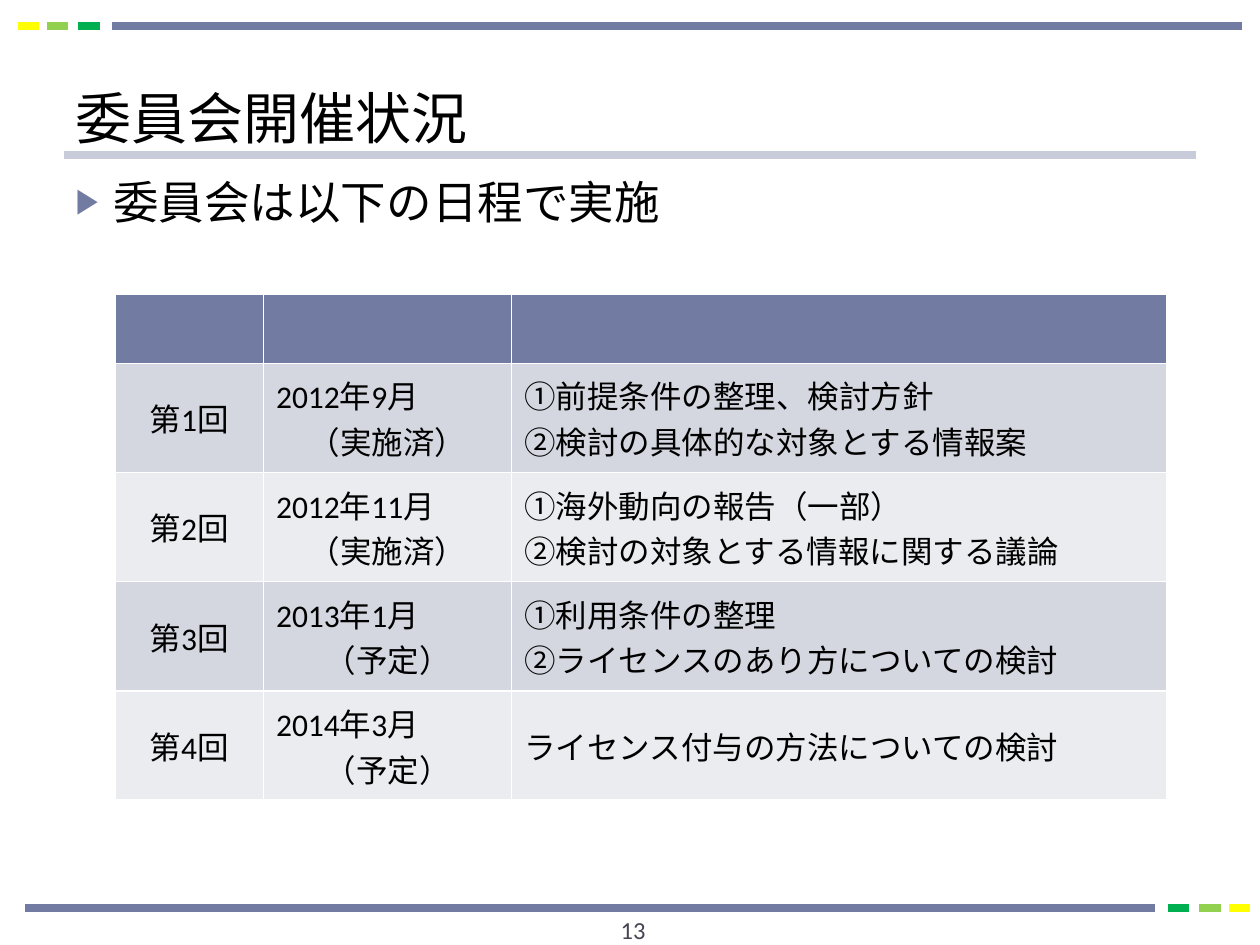
from lxml.etree import SubElement
from pptx import Presentation
from pptx.dml.color import RGBColor
from pptx.enum.shapes import MSO_CONNECTOR
from pptx.enum.text import MSO_ANCHOR, MSO_AUTO_SIZE, PP_ALIGN
from pptx.oxml.ns import qn
from pptx.util import Pt

SLATE = RGBColor(0x72, 0x7C, 0xA3)
PALE_SLATE = RGBColor(0xC7, 0xCB, 0xDA)
GREEN = RGBColor(0x00, 0xB0, 0x50)
LIME = RGBColor(0x92, 0xD0, 0x50)
YELLOW = RGBColor(0xFF, 0xFF, 0x00)
BAND_DARK = RGBColor(0xD5, 0xD7, 0xE0)
BAND_LIGHT = RGBColor(0xEB, 0xEC, 0xF0)
BLACK = RGBColor(0x00, 0x00, 0x00)
GRAY = RGBColor(0x46, 0x46, 0x53)

BODY_FONT = "Calibri"
TITLE_FONT = "TeX Gyre Bonum"

RULE_PARTS = [
    (0, 645.8, SLATE),
    (653, 12.24, GREEN),
    (671, 12.24, LIME),
    (687.6, 12.24, YELLOW),
]
COL_WIDTHS = [85, 141.8, 374.4]
HEADER_HEIGHT, ROW_HEIGHT = 39.6, 62.4
MEETINGS = [
    ("第1回", "2012年9月\n（実施済）", "①前提条件の整理、検討方針\n②検討の具体的な対象とする情報案"),
    ("第2回", "2012年11月\n（実施済）", "①海外動向の報告（一部）\n②検討の対象とする情報に関する議論"),
    ("第3回", "2013年1月\n（予定）", "①利用条件の整理\n②ライセンスのあり方についての検討"),
    ("第4回", "2014年3月\n（予定）", "ライセンス付与の方法についての検討"),
]


def place(sp, box):
    """Move a shape to a box of left, top, width and height in points."""
    sp.left, sp.top, sp.width, sp.height = map(Pt, box)


def style_text(p, size, color=BLACK, font=BODY_FONT, align=PP_ALIGN.LEFT):
    """Format every run of a paragraph."""
    p.alignment = align
    for r in p.runs:
        r.font.size = Pt(size)
        r.font.name = font
        r.font.color.rgb = color


def add_line(s, x1, x2, y, color, width=4.5):
    """Draw a horizontal line."""
    line = s.shapes.add_connector(MSO_CONNECTOR.STRAIGHT, Pt(x1), Pt(y), Pt(x2), Pt(y))
    line.line.color.rgb = color
    line.line.width = Pt(width)
    SubElement(line._element.spPr, qn("a:effectLst"))


def add_rule(s, box, mirrored=False):
    """Draw a long bar followed by three coloured dashes, optionally mirrored."""
    left, top, width, _ = box
    for offset, length, color in RULE_PARTS:
        start = width - offset - length if mirrored else offset
        add_line(s, left + start, left + start + length, top, color)


def add_title(s, box):
    """Fill the title placeholder and underline it."""
    add_line(s, 36.72, 683.28, 88.56, PALE_SLATE, 4.25)
    sp = s.shapes.title
    place(sp, box)
    tf = sp.text_frame
    tf.text = "委員会開催状況"
    tf.vertical_anchor = MSO_ANCHOR.BOTTOM
    tf.auto_size = MSO_AUTO_SIZE.NONE
    style_text(tf.paragraphs[0], 32, font=TITLE_FONT)


def add_body(s, box):
    """Fill the body placeholder with one bulleted line."""
    sp = s.placeholders[1]
    place(sp, box)
    tf = sp.text_frame
    tf.text = "委員会は以下の日程で実施"
    tf.auto_size = MSO_AUTO_SIZE.NONE
    p = tf.paragraphs[0]
    p.space_before = Pt(0)
    pPr = p._p.get_or_add_pPr()
    pPr.set("marL", str(Pt(21.6)))
    pPr.set("indent", str(Pt(-21.6)))
    SubElement(SubElement(pPr, qn("a:buClr")), qn("a:srgbClr"), val=str(SLATE))
    SubElement(pPr, qn("a:buSzPct"), val="76000")
    SubElement(pPr, qn("a:buFont"), typeface=BODY_FONT)
    SubElement(pPr, qn("a:buChar"), char="▶")
    style_text(p, 26)


def fill_cell(cell, text, color, col):
    """Write a cell, centring the round number and the meeting status."""
    cell.fill.solid()
    cell.fill.fore_color.rgb = color
    cell.vertical_anchor = MSO_ANCHOR.MIDDLE
    cell.text_frame.text = text
    for i, p in enumerate(cell.text_frame.paragraphs):
        centred = col == 0 or (col == 1 and i == 1)
        style_text(p, 18, align=PP_ALIGN.CENTER if centred else PP_ALIGN.LEFT)


def add_schedule(s, box):
    """Add the table of committee meetings."""
    rows = [("", "", "")] + MEETINGS
    table = s.shapes.add_table(len(rows), len(COL_WIDTHS), *map(Pt, box)).table
    for column, width in zip(table.columns, COL_WIDTHS):
        column.width = Pt(width)
    for i, texts in enumerate(rows):
        table.rows[i].height = Pt(ROW_HEIGHT if i else HEADER_HEIGHT)
        band = BAND_DARK if i % 2 else BAND_LIGHT
        for j, text in enumerate(texts):
            fill_cell(table.cell(i, j), text, band if i else SLATE, j)


def add_page_number(s, box):
    """Add the centred page number."""
    tf = s.shapes.add_textbox(*map(Pt, box)).text_frame
    tf.word_wrap = True
    tf.text = "13"
    style_text(tf.paragraphs[0], 14, GRAY, align=PP_ALIGN.CENTER)


def main():
    """Build and save the slide."""
    prs = Presentation()
    prs.slide_width, prs.slide_height = Pt(720), Pt(540)
    s = prs.slides.add_slide(prs.slide_layouts[1])
    add_rule(s, (14.4, 519.1, 699.84, 0))
    add_rule(s, (10.08, 15.1, 699.84, 0), mirrored=True)
    add_title(s, (36, 12.24, 648, 77.76))
    add_body(s, (36, 95.76, 648, 406.8))
    add_schedule(s, (65.6, 168, sum(COL_WIDTHS), HEADER_HEIGHT + ROW_HEIGHT * len(MEETINGS)))
    add_page_number(s, (283.7, 519.1, 156.2, 28.8))
    prs.save("out.pptx")


if __name__ == "__main__":
    main()
